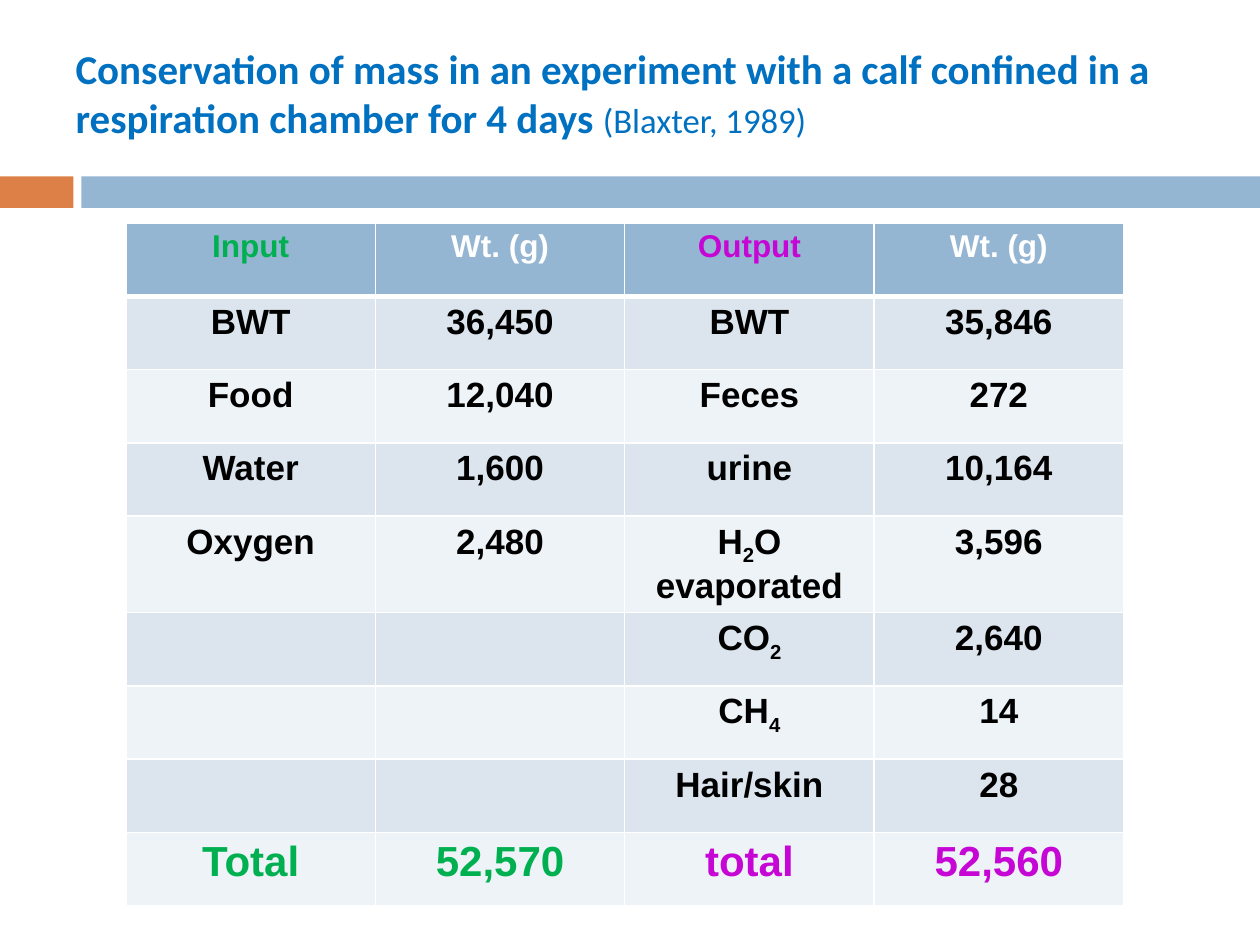
"""Build a slide with the mass balance of a calf in a respiration chamber."""
from dataclasses import dataclass

from lxml import etree
from pptx import Presentation
from pptx.dml.color import RGBColor
from pptx.enum.shapes import MSO_SHAPE
from pptx.enum.text import MSO_ANCHOR, MSO_AUTO_SIZE, PP_ALIGN
from pptx.oxml.ns import qn
from pptx.util import Pt

RECTANGLE = MSO_SHAPE.RECTANGLE
MIDDLE = MSO_ANCHOR.MIDDLE
NO_AUTOFIT = MSO_AUTO_SIZE.NONE
LEFT, CENTER = PP_ALIGN.LEFT, PP_ALIGN.CENTER

BLUE, ORANGE, TITLE_BLUE = "94B6D2", "DD8047", "0070C0"
GREEN, PURPLE, WHITE, BLACK = "00B050", "C506D4", "FFFFFF", "000000"
BAND_FILLS = ("EEF3F7", "DCE5EE")
TITLE_ONLY = 5
SUBSCRIPT_MARK = "_"


@dataclass(frozen=True)
class Band:
    left: float
    width: float
    color: str


@dataclass(frozen=True)
class BalanceRow:
    texts: tuple[str, str, str, str]
    size: float = 20
    colors: tuple[str, str, str, str] = (BLACK,) * 4
    height: float = 41.9


BANDS = (Band(0, 42, ORANGE), Band(46.5, 673.5, BLUE))
BALANCE = (
    BalanceRow(("Input", "Wt. (g)", "Output", "Wt. (g)"), 18, (GREEN, WHITE, PURPLE, WHITE)),
    BalanceRow(("BWT", "36,450", "BWT", "35,846")),
    BalanceRow(("Food", "12,040", "Feces", "272")),
    BalanceRow(("Water", "1,600", "urine", "10,164")),
    BalanceRow(("Oxygen", "2,480", "H_2_O evaporated", "3,596"), height=50.4),
    BalanceRow(("", "", "CO_2", "2,640")),
    BalanceRow(("", "", "CH_4", "14")),
    BalanceRow(("", "", "Hair/skin", "28")),
    BalanceRow(("Total", "52,570", "total", "52,560"), 24, (GREEN, GREEN, PURPLE, PURPLE)),
)


def rgb(color: str) -> RGBColor:
    return RGBColor.from_string(color)


def add_run(paragraph, text: str, font_name: str, size: float, color: str, bold: bool = True):
    run = paragraph.add_run()
    run.text = text
    run.font.name = font_name
    run.font.size = Pt(size)
    run.font.bold = bold
    run.font.color.rgb = rgb(color)
    return run


def add_band(slide, band: Band) -> None:
    bar = slide.shapes.add_shape(RECTANGLE, Pt(band.left), Pt(100.8), Pt(band.width), Pt(18))
    bar.shadow.inherit = False
    bar.fill.solid()
    bar.fill.fore_color.rgb = rgb(band.color)
    bar.line.fill.background()


def fill_title(title) -> None:
    title.left, title.top, title.width, title.height = Pt(36), Pt(21.6), Pt(648), Pt(62.6)
    frame = title.text_frame
    frame.word_wrap = True
    frame.auto_size = NO_AUTOFIT
    frame.vertical_anchor = MIDDLE
    heading = frame.paragraphs[0]
    heading.alignment = LEFT
    add_run(heading, "Conservation of mass in an experiment with a calf confined in a "
            "respiration chamber for 4 days ", "Calibri", 23.4, TITLE_BLUE)
    add_run(heading, "(Blaxter, 1989)", "Calibri", 19.8, TITLE_BLUE, bold=False)


def set_borders(cell, top: float, bottom: float) -> None:
    properties = cell._tc.get_or_add_tcPr()
    widths = {"a:lnL": 1, "a:lnR": 1, "a:lnT": top, "a:lnB": bottom}
    for position, (side, width) in enumerate(widths.items()):
        border = etree.Element(qn(side), w=str(Pt(width)))
        fill = etree.SubElement(border, qn("a:solidFill"))
        etree.SubElement(fill, qn("a:srgbClr"), val=WHITE)
        properties.insert(position, border)


def fill_cell(cell, text: str, size: float, color: str, fill: str) -> None:
    cell.fill.solid()
    cell.fill.fore_color.rgb = rgb(fill)
    entry = cell.text_frame.paragraphs[0]
    entry.alignment = CENTER
    if not text:
        entry.font.size = Pt(size)
        return
    for index, part in enumerate(text.split(SUBSCRIPT_MARK)):
        run = add_run(entry, part, "Arial", size, color)
        if index % 2:
            run._r.get_or_add_rPr().set("baseline", "-25000")


def add_balance(slide, rows: tuple[BalanceRow, ...]) -> None:
    columns = len(rows[0].texts)
    total_height = sum(row.height for row in rows)
    table = slide.shapes.add_table(
        len(rows), columns, Pt(72), Pt(127.4), Pt(570), Pt(total_height)).table
    for row_index, row in enumerate(rows):
        table.rows[row_index].height = Pt(row.height)
        fill = BAND_FILLS[row_index % 2] if row_index else BLUE
        top, bottom = (3 if row_index == 1 else 1), (3 if row_index == 0 else 1)
        for column, (text, color) in enumerate(zip(row.texts, row.colors)):
            cell = table.cell(row_index, column)
            fill_cell(cell, text, row.size, color, fill)
            set_borders(cell, top, bottom)


def main() -> None:
    deck = Presentation()
    deck.slide_width, deck.slide_height = Pt(720), Pt(540)
    slide = deck.slides.add_slide(deck.slide_layouts[TITLE_ONLY])
    for band in BANDS:
        add_band(slide, band)
    fill_title(slide.shapes.title)
    add_balance(slide, BALANCE)
    deck.save("out.pptx")


if __name__ == "__main__":
    main()
